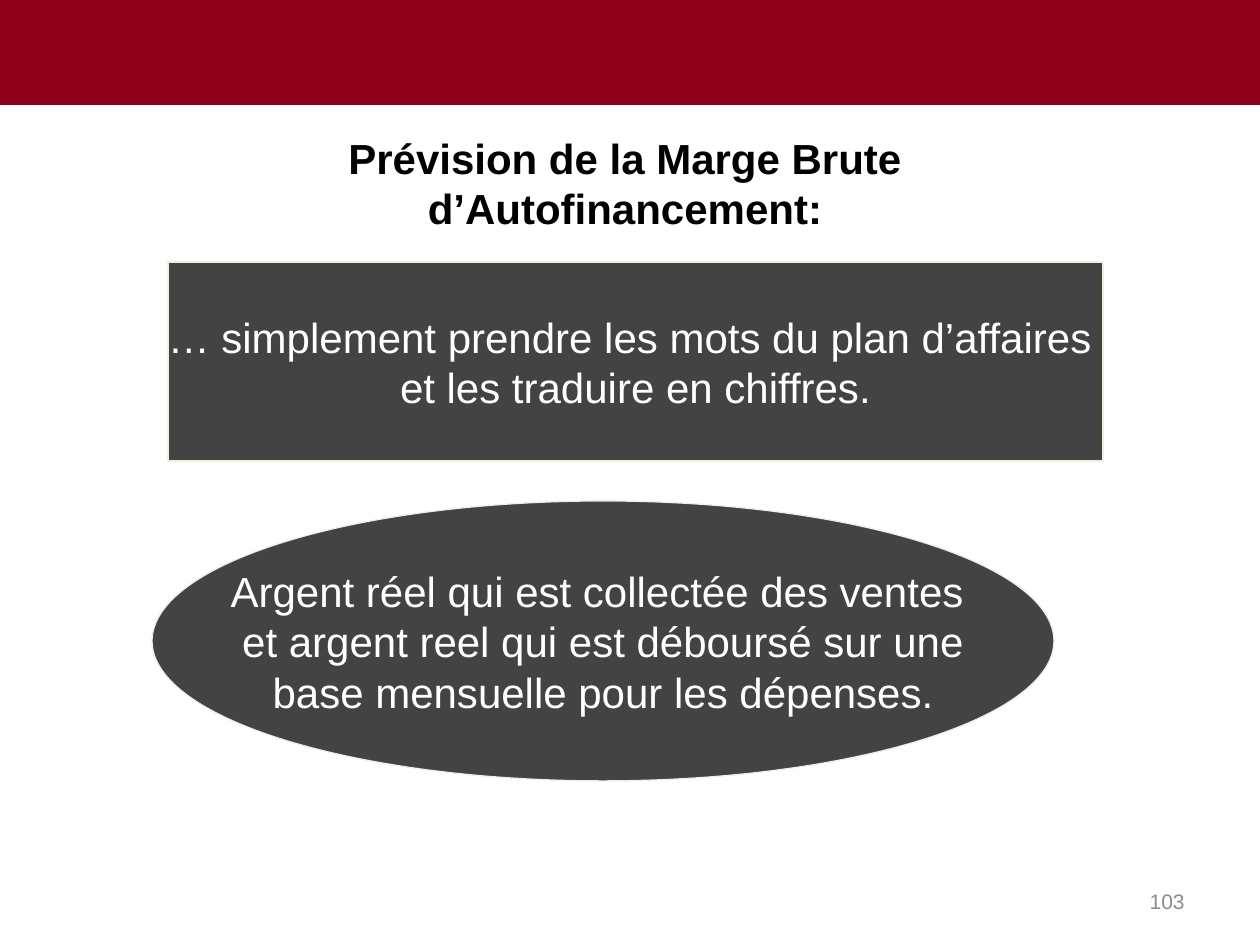
import pptx
import pptx.util
from pptx.dml.color import RGBColor
from pptx.enum.shapes import MSO_SHAPE
from pptx.enum.text import MSO_ANCHOR, PP_ALIGN

PX = 914400 // 126
FONT = "Arial"
BURGUNDY = RGBColor(0x8F, 0x00, 0x1A)
CHARCOAL = RGBColor(0x43, 0x43, 0x43)
IVORY = RGBColor(0xF0, 0xEF, 0xE0)
WHITE = RGBColor(0xFF, 0xFF, 0xFF)
BLACK = RGBColor(0x00, 0x00, 0x00)
GREY = RGBColor(0x8C, 0x8C, 0x8C)


def to_emu(box):
    return [length * PX for length in box]


def write_lines(frame, lines, size, color, align, bold=False):
    """Put one paragraph per line into the frame and format them alike."""
    frame.text = "\n".join(lines)
    for paragraph in frame.paragraphs:
        paragraph.alignment = align
        for run in paragraph.runs:
            run.font.name = FONT
            run.font.size = pptx.util.Pt(size)
            run.font.bold = bold
            run.font.color.rgb = color


def add_filled_shape(slide, preset, box, fill):
    shape = slide.shapes.add_shape(preset, *to_emu(box))
    shape.shadow.inherit = False
    shape.fill.solid()
    shape.fill.fore_color.rgb = fill
    return shape


def add_banner(slide, box):
    banner = add_filled_shape(slide, MSO_SHAPE.RECTANGLE, box, BURGUNDY)
    banner.line.fill.background()


def add_title(slide, box, title):
    frame = slide.shapes.add_textbox(*to_emu(box)).text_frame
    frame.word_wrap = True
    write_lines(frame, [title], 24, BLACK, PP_ALIGN.CENTER, bold=True)


def add_statement(slide, preset, box, lines):
    statement = add_filled_shape(slide, preset, box, CHARCOAL)
    statement.line.color.rgb = IVORY
    statement.line.width = pptx.util.Pt(0.75)
    frame = statement.text_frame
    frame.word_wrap = False
    frame.vertical_anchor = MSO_ANCHOR.MIDDLE
    write_lines(frame, lines, 24, WHITE, PP_ALIGN.CENTER)


def add_page_number(slide, box, number):
    frame = slide.shapes.add_textbox(*to_emu(box)).text_frame
    frame.word_wrap = True
    frame.vertical_anchor = MSO_ANCHOR.MIDDLE
    write_lines(frame, [number], 12, GREY, PP_ALIGN.RIGHT)


def main():
    deck = pptx.Presentation()
    deck.slide_width = pptx.util.Inches(10)
    deck.slide_height = pptx.util.Inches(7.5)
    slide = deck.slides.add_slide(deck.slide_layouts[6])

    add_banner(slide, (0, 0, 1260, 105))
    add_title(slide, (179, 126, 892, 115),
              "Prévision de la Marge Brute d’Autofinancement:")
    add_statement(slide, MSO_SHAPE.RECTANGLE, (168, 262, 935, 199), [
        "… simplement prendre les mots du plan d’affaires ",
        "et les traduire en chiffres.",
    ])
    add_statement(slide, MSO_SHAPE.OVAL, (152, 501, 902, 280), [
        "Argent réel qui est collectée des ventes ",
        "et argent reel qui est déboursé sur une",
        "base mensuelle pour les dépenses.",
    ])
    add_page_number(slide, (903, 876, 294, 50), "103")
    deck.save("out.pptx")


if __name__ == "__main__":
    main()
